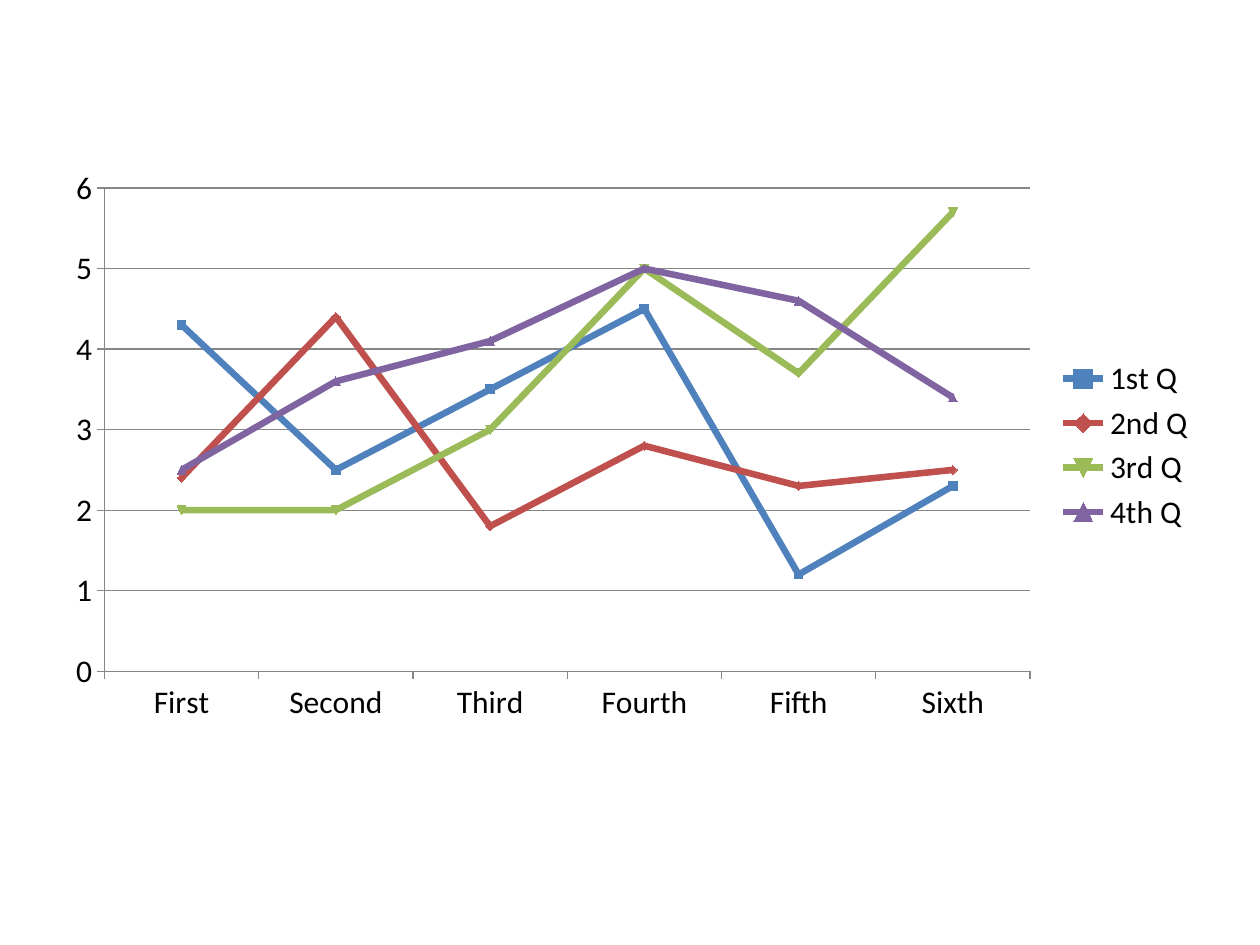
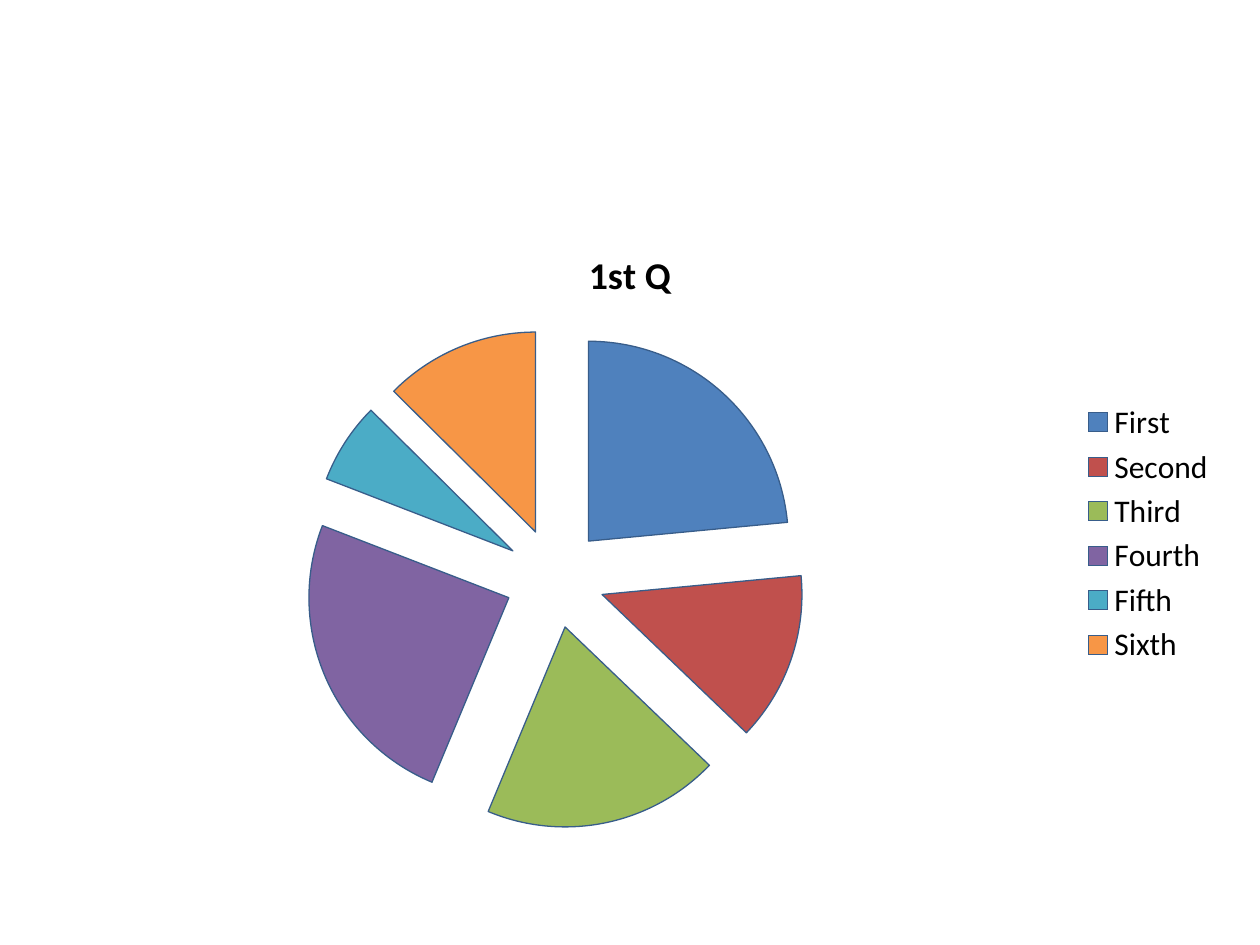
from lxml import etree
from pptx import Presentation
from pptx import util as u
from pptx.chart.data import CategoryChartData
from pptx.dml.color import RGBColor
from pptx.enum import chart as ec
from pptx.oxml import ns

# Shared look and data
COLORS = {"text": "000000", "axis": "868686", "edge": "385D8A", "paper": "FFFFFF",
          "blue": "4F81BD", "red": "C0504D", "green": "9BBB59",
          "purple": "8064A2", "aqua": "4BACC6", "orange": "F79646"}
ACCENTS = ["blue", "red", "green", "purple", "aqua", "orange"]
FONT = {"name": "Calibri", "size": u.Pt(18)}
TITLE_FONT = {"name": "Calibri", "size": u.Pt(21.6), "bold": True}
LEGEND = {"position": ec.XL_LEGEND_POSITION.RIGHT, "include_in_layout": False}
QUARTERS = {"1st Q": (4.3, 2.5, 3.5, 4.5, 1.2, 2.3),
            "2nd Q": (2.4, 4.4, 1.8, 2.8, 2.3, 2.5),
            "3rd Q": (2, 2, 3, 5, 3.7, 5.7),
            "4th Q": (2.5, 3.6, 4.1, 5, 4.6, 3.4)}

prs = Presentation()
prs.slide_width, prs.slide_height = u.Inches(10), u.Inches(7.5)

data = CategoryChartData()
data.categories = ["First", "Second", "Third", "Fourth", "Fifth", "Sixth"]
for name, values in QUARTERS.items():
    data.add_series(name, values)


def rgb(name):
    return RGBColor.from_string(COLORS[name])


def style(obj, values):
    for key, value in values.items():
        setattr(obj, key, value)


# One chart per slide: type, left, top, width, height in inches
charts = []
for kind, *box in [(ec.XL_CHART_TYPE.LINE_MARKERS, 0.42, 1.25, 9.17, 4.57),
                   (ec.XL_CHART_TYPE.PIE, 0.25, 1.76, 9.5, 4.95)]:
    s = prs.slides.add_slide(prs.slide_layouts[6])
    s.background.fill.solid()
    s.background.fill.fore_color.rgb = rgb("paper")
    chart = s.shapes.add_chart(kind, *map(u.Inches, box), data).chart
    style(chart.font, FONT)
    chart.font.color.rgb = rgb("text")
    chart.has_title = False
    chart.has_legend = True
    style(chart.legend, LEGEND)
    charts.append(chart)
line, pie = charts

# Line chart: axes and gridlines
line.value_axis.has_major_gridlines = True
for axis in (line.category_axis, line.value_axis):
    style(axis, {"major_tick_mark": ec.XL_TICK_MARK.OUTSIDE,
                 "minor_tick_mark": ec.XL_TICK_MARK.NONE})
    axis.tick_labels.number_format = "General"
    axis.tick_labels.number_format_is_linked = False
for part in (line.category_axis, line.value_axis, line.value_axis.major_gridlines):
    part.format.line.width = u.Pt(0.75)
    part.format.line.color.rgb = rgb("axis")

# Line chart: one colour per quarter
for ser, accent in zip(line.plots[0].series, ACCENTS):
    ser.smooth = False
    ser.format.line.width = u.Pt(3.75)
    ser.format.line.color.rgb = rgb(accent)
    ser.marker.size = 5
    ser.marker.format.fill.solid()
    ser.marker.format.fill.fore_color.rgb = rgb(accent)
    ser.marker.format.line.color.rgb = rgb(accent)

# Pie chart: title
pie.has_title = True
tf = pie.chart_title.text_frame
tf.text = "1st Q"
r = tf.paragraphs[0].runs[0]
style(r.font, TITLE_FONT)
r.font.color.rgb = rgb("text")

# Pie chart: one colour per slice, all slices pulled apart
pie.plots[0].vary_by_categories = True
ser = pie.plots[0].series[0]
for i, accent in enumerate(ACCENTS):
    fmt = ser.points[i].format
    fmt.fill.solid()
    fmt.fill.fore_color.rgb = rgb(accent)
    fmt.line.width = u.Pt(0.75)
    fmt.line.color.rgb = rgb("edge")
explosion = etree.Element(ns.qn("c:explosion"), val="25")
ser._element.find(ns.qn("c:dPt")).addprevious(explosion)

# The pie starts with one series; this adds the other quarters in the same style
pie.replace_data(data)

prs.save("out.pptx")
